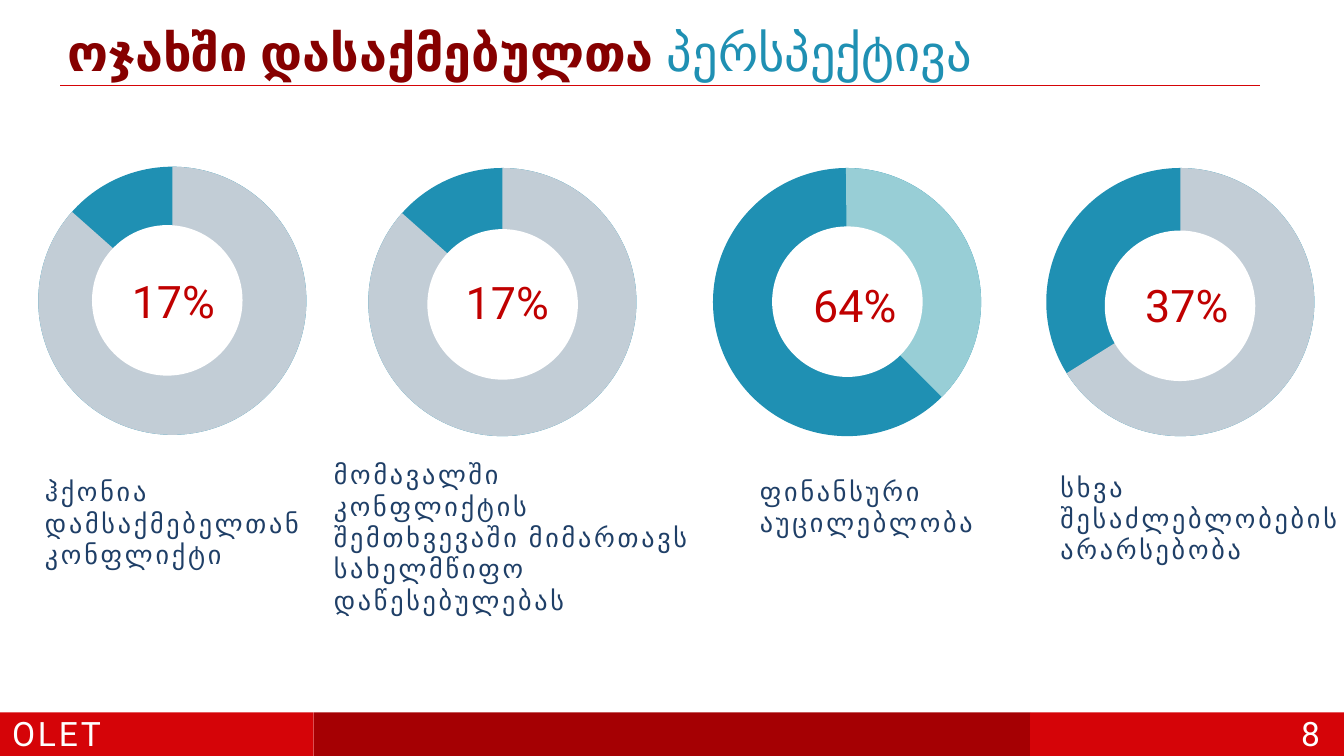
from pptx import Presentation
from pptx.dml.color import RGBColor
from pptx.enum.shapes import MSO_CONNECTOR, MSO_SHAPE as SHAPE
from pptx.enum.text import MSO_ANCHOR as ANCHOR, MSO_AUTO_SIZE, PP_ALIGN as ALIGN
from pptx.oxml.ns import qn
from pptx.util import Pt

WIDTH, HEIGHT = 1440, 810
FONT = "Roboto"
COLORS = {
    "red": "D50408", "dark red": "A50003", "title red": "860000",
    "percent": "C00000", "blue": "1F90B3", "light blue": "98CED6",
    "grey": "C2CDD6", "navy": "1F3F67", "white": "FFFFFF",
}

TITLE = [("ოჯახში დასაქმებულთა ", "title red", True), ("პერსპექტივა", "blue", False)]
RING, HOLE = 287.3, 161.3
PERCENT_SIZE = (119.5, 65.5)
LABEL_HEIGHT = 145.4

# Slice angles run clockwise from twelve o'clock; a label box is left, top, width.
DONUTS = [
    dict(ring=(41, 178.6), hole=(98.6, 241.2), slice=(0, 311.55), color="grey",
         percent="17%", percent_at=(126, 290.2),
         label="ჰქონია დამსაქმებელთან კონფლიქტი", label_box=(41, 487.4, 317.5)),
    dict(ring=(394.6, 180), hole=(457.9, 245.5), slice=(0, 311.55), color="grey",
         percent="17%", percent_at=(483.8, 290.9),
         label="მომავალში კონფლიქტის შემთხვევაში მიმართავს სახელმწიფო დაწესებულებას",
         label_box=(350.6, 502.6, 405.4)),
    dict(ring=(763.9, 180), hole=(827.3, 242.6), slice=(359.54, 135.03), color="light blue",
         percent="64%", percent_at=(856.1, 293.8),
         label="ფინანსური აუცილებლობა", label_box=(807.1, 470.2, 405.4)),
    dict(ring=(1121, 180), hole=(1183.7, 247), slice=(0, 237.95), color="grey",
         percent="37%", percent_at=(1211.8, 294.5),
         label="სხვა\nშესაძლებლობების არარსებობა", label_box=(1129, 482.4, 405.4)),
]

BAR_TOP = 763.2
BARS = [(336.2, "red"), (767.6, "dark red"), (336.2, "red")]
FOOTER = [
    ("OLET", (5.8, 758.2, 138.2, 54.7), dict(anchor=ANCHOR.MIDDLE, spacing=3)),
    ("8", (1350, 767.5, 71.3, 43.2), dict(anchor=ANCHOR.BOTTOM, align=ALIGN.RIGHT)),
]


def rgb(name):
    return RGBColor.from_string(COLORS[name])


def points(*lengths):
    return [Pt(length) for length in lengths]


def add_shape(slide, kind, box, color):
    shape = slide.shapes.add_shape(kind, *points(*box))
    shape.shadow.inherit = False
    shape.fill.solid()
    shape.fill.fore_color.rgb = rgb(color)
    shape.line.fill.background()
    return shape


def style_span(span, size, color, bold=False, spacing=0):
    span.font.name, span.font.size, span.font.bold = FONT, Pt(size), bold
    span.font.color.rgb = rgb(color)
    if spacing:
        span.font._element.set("spc", str(spacing * 100))


def add_text(slide, text, box, size, color, anchor=ANCHOR.TOP, align=ALIGN.LEFT, spacing=0):
    frame = slide.shapes.add_textbox(*points(*box)).text_frame
    frame.word_wrap = True
    frame.vertical_anchor = anchor
    frame.text = text
    for para in frame.paragraphs:
        para.alignment = align
        for span in para.runs:
            style_span(span, size, color, spacing=spacing)


def add_title(slide):
    title = slide.shapes.title
    title.left, title.top, title.width, title.height = points(64.8, 15.1, 1299.6, 76.3)
    frame = title.text_frame
    frame.auto_size = MSO_AUTO_SIZE.NONE
    frame.vertical_anchor = ANCHOR.BOTTOM
    para = frame.paragraphs[0]
    para.alignment = ALIGN.LEFT
    para.line_spacing = 0.9
    for text, color, bold in TITLE:
        span = para.add_run()
        span.text = text
        style_span(span, 54, color, bold)

    rule = slide.shapes.add_connector(MSO_CONNECTOR.STRAIGHT, *points(64.8, 91.4, 1350, 91.4))
    rule.line.color.rgb = rgb("red")
    rule.line.width = Pt(1.5)
    properties = rule._element.spPr
    properties.append(properties.makeelement(qn("a:effectLst"), {}))


def add_donut(slide, donut):
    ring_box = (*donut["ring"], RING, RING)
    add_shape(slide, SHAPE.OVAL, ring_box, "blue")
    pie = add_shape(slide, SHAPE.PIE, ring_box, donut["color"])
    pie.rotation = 270
    for index, degrees in enumerate(donut["slice"]):
        pie.adjustments[index] = degrees * 0.6  # 60000 angle units over 100000
    add_shape(slide, SHAPE.OVAL, (*donut["hole"], HOLE, HOLE), "white")
    add_text(slide, donut["percent"], (*donut["percent_at"], *PERCENT_SIZE),
             48, "percent", align=ALIGN.CENTER)
    add_text(slide, donut["label"], (*donut["label_box"], LABEL_HEIGHT),
             28, "navy", anchor=ANCHOR.MIDDLE, spacing=3)


def add_footer(slide):
    left = 0
    for width, color in BARS:
        add_shape(slide, SHAPE.RECTANGLE, (left, BAR_TOP, width, HEIGHT - BAR_TOP), color)
        left += width
    for text, box, options in FOOTER:
        add_text(slide, text, box, 36, "white", **options)


def main():
    deck = Presentation()
    deck.slide_width, deck.slide_height = points(WIDTH, HEIGHT)
    slide = deck.slides.add_slide(deck.slide_layouts[5])
    add_footer(slide)
    add_title(slide)
    for donut in DONUTS:
        add_donut(slide, donut)
    deck.save("out.pptx")


if __name__ == "__main__":
    main()
